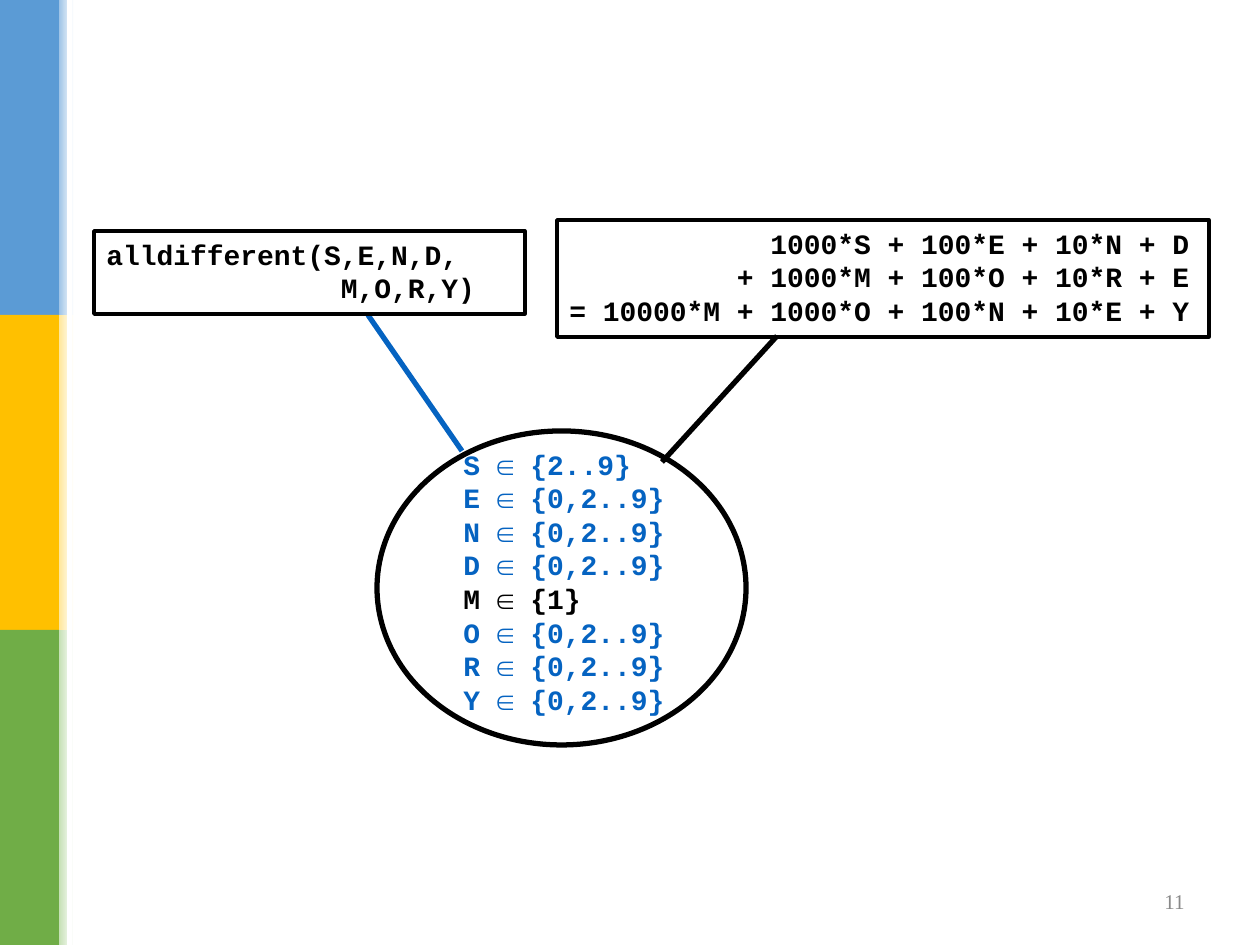
from dataclasses import dataclass

from lxml.etree import SubElement
from pptx import Presentation
from pptx.dml.color import RGBColor
from pptx.enum.shapes import MSO_CONNECTOR, MSO_SHAPE
from pptx.enum.text import MSO_ANCHOR, MSO_AUTO_SIZE, PP_ALIGN
from pptx.oxml.ns import qn
from pptx.util import Emu, Pt

EMU_PER_PX = 914400 / 126


@dataclass(frozen=True)
class Theme:
    """Colours, fonts and type sizes of the slide."""
    ink: str = "000000"
    accent: str = "0563C1"
    paper: str = "FFFFFF"
    muted: str = "898989"
    bands: tuple = (("5B9BD5", "9DC3E6"), ("FFC000", "FFE699"), ("70AD47", "C5E0B4"))
    code_font: str = "Courier New"
    code_size: int = 16
    code_pitch: float = 19.2
    number_font: str = "Times New Roman"
    number_size: int = 12
    frame_width: int = 2
    link_width: int = 3


THEME = Theme()
DOMAINS = {
    "S": "{2..9}", "E": "{0,2..9}", "N": "{0,2..9}", "D": "{0,2..9}",
    "M": "{1}", "O": "{0,2..9}", "R": "{0,2..9}", "Y": "{0,2..9}",
}
ALL_DIFFERENT = [
    "alldifferent(S,E,N,D,",
    "              M,O,R,Y)",
]
SUM_EQUATION = [
    "            1000*S + 100*E + 10*N + D",
    "          + 1000*M + 100*O + 10*R + E",
    "= 10000*M + 1000*O + 100*N + 10*E + Y",
]


def px(*lengths):
    """Turn pixel lengths into EMU."""
    return [Emu(round(length * EMU_PER_PX)) for length in lengths]


def rgb(colour):
    """Turn a hex string into a colour."""
    return RGBColor.from_string(colour)


def add_block(slide, box, colour, fade=None):
    """Add a borderless rectangle, plain or fading from left to right."""
    block = slide.shapes.add_shape(MSO_SHAPE.RECTANGLE, *px(*box))
    block.shadow.inherit = False
    block.line.fill.background()
    if fade:
        block.fill.gradient()
        block.fill.gradient_angle = 0
        for stop, shade in zip(block.fill.gradient_stops, (colour, fade)):
            stop.color.rgb = rgb(shade)
    else:
        block.fill.solid()
        block.fill.fore_color.rgb = rgb(colour)


def add_outline(slide, kind, box, width):
    """Add an unfilled outlined shape."""
    outline = slide.shapes.add_shape(kind, *px(*box))
    outline.shadow.inherit = False
    outline.fill.background()
    outline.line.color.rgb = rgb(THEME.ink)
    outline.line.width = Pt(width)
    return outline


def add_link(slide, start, end, colour):
    """Draw a straight line between a constraint and the variables."""
    link = slide.shapes.add_connector(MSO_CONNECTOR.STRAIGHT, *px(*start, *end))
    link.line.color.rgb = rgb(colour)
    link.line.width = Pt(THEME.link_width)
    SubElement(link._element.spPr, qn("a:effectLst"))


def write_code(frame, lines, wrap=False):
    """Fill a text frame with (text, colour) lines of code."""
    frame.word_wrap = wrap
    frame.auto_size = MSO_AUTO_SIZE.SHAPE_TO_FIT_TEXT
    frame.vertical_anchor = MSO_ANCHOR.TOP
    for index, (text, colour) in enumerate(lines):
        line = frame.add_paragraph() if index else frame.paragraphs[0]
        line.text = text
        line.alignment = PP_ALIGN.LEFT
        line.line_spacing = Pt(THEME.code_pitch)
        line.font.name = THEME.code_font
        line.font.size = Pt(THEME.code_size)
        line.font.bold = True
        line.font.color.rgb = rgb(colour)


def add_side_bar(slide, box):
    """Stack the coloured bands with their fading edges."""
    left, top, width, height = box
    solid, edge = 59, 15
    band_height = height // len(THEME.bands)
    for index, (colour, tint) in enumerate(THEME.bands):
        band_top = top + index * band_height
        add_block(slide, (left, band_top, solid, band_height), colour)
        add_block(slide, (left + solid, band_top, edge, band_height), tint, THEME.paper)
    add_block(slide, (left + 67, top, 5, height), THEME.paper)


def add_constraint(slide, box, lines, wrap=False):
    """Add a framed constraint."""
    constraint = add_outline(slide, MSO_SHAPE.RECTANGLE, box, THEME.frame_width)
    write_code(constraint.text_frame, [(text, THEME.ink) for text in lines], wrap)


def add_variables(slide, box):
    """Add the ellipse holding the variable domains."""
    left, top, width, height = box
    domains = slide.shapes.add_textbox(*px(left + 74, top + 10, 231, 282))
    lines = [
        (f"{name} ∈ {domain}", THEME.ink if name == "M" else THEME.accent)
        for name, domain in DOMAINS.items()
    ]
    write_code(domains.text_frame, lines)
    add_outline(slide, MSO_SHAPE.OVAL, box, THEME.link_width)


def add_page_number(slide, box, number):
    """Add the page number, right aligned in its box."""
    frame = slide.shapes.add_textbox(*px(*box)).text_frame
    frame.word_wrap = True
    frame.vertical_anchor = MSO_ANCHOR.MIDDLE
    line = frame.paragraphs[0]
    line.text = number
    line.alignment = PP_ALIGN.RIGHT
    line.font.name = THEME.number_font
    line.font.size = Pt(THEME.number_size)
    line.font.color.rgb = rgb(THEME.muted)


def main():
    """Build and save the slide."""
    deck = Presentation()
    deck.slide_width, deck.slide_height = px(1260, 945)
    slide = deck.slides.add_slide(deck.slide_layouts[6])
    add_side_bar(slide, (0, 0, 74, 945))
    add_page_number(slide, (903, 876, 294, 50), "11")
    add_link(slide, (462, 451), (368, 315), THEME.accent)
    add_constraint(slide, (94, 231, 431, 83), ALL_DIFFERENT, wrap=True)
    add_constraint(slide, (557, 220, 652, 117), SUM_EQUATION)
    add_link(slide, (662, 462), (777, 336), THEME.ink)
    add_variables(slide, (377, 431, 369, 314))
    deck.save("out.pptx")


if __name__ == "__main__":
    main()
